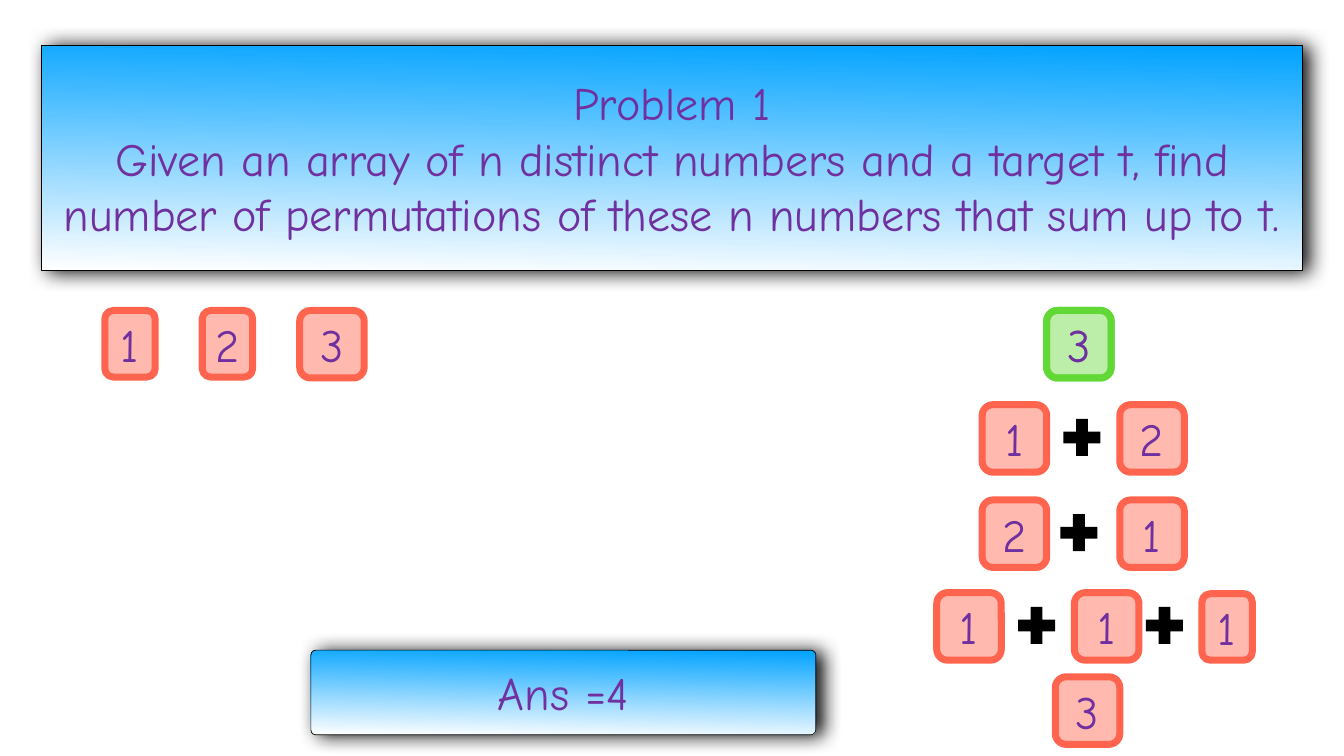
import pptx
import pptx.util
import pptx.oxml
import pptx.oxml.ns
from pptx.dml.color import RGBColor
from pptx.enum.shapes import MSO_SHAPE
from pptx.enum.text import MSO_ANCHOR, MSO_AUTO_SIZE, PP_ALIGN

RED = RGBColor(0xFF, 0x64, 0x4E)
GREEN = RGBColor(0x61, 0xD8, 0x36)
MINT = RGBColor(0xA0, 0xE8, 0x86)
BLUE = RGBColor(0x00, 0xA2, 0xFF)
WHITE = RGBColor(0xFF, 0xFF, 0xFF)
BLACK = RGBColor(0, 0, 0)
PURPLE = RGBColor(0x70, 0x30, 0xA0)
FONT = "Comic Neue"

# Places and sizes are percent of the slide's width and height.
WIDTH, HEIGHT = pptx.util.Inches(26.67), pptx.util.Inches(15)
WIDE, SLIM = (4.8, 8.93), (3.75, 8.8)
PLUS = (3.75, 6.67)
PITCH = 10.24  # from one term of a sum to the next


def scale(box):
    left, top, wide, high = box
    return [round(n / 100 * full) for n, full in
            ((left, WIDTH), (top, HEIGHT), (wide, WIDTH), (high, HEIGHT))]


def put_text(shape, text, size=66, color=PURPLE, fit=MSO_AUTO_SIZE.NONE):
    frame = shape.text_frame
    frame.text = text
    frame.word_wrap = True
    frame.auto_size = fit
    frame.vertical_anchor = MSO_ANCHOR.MIDDLE
    inset = pptx.util.Inches(0.06)
    frame.margin_left = frame.margin_right = inset
    frame.margin_top = frame.margin_bottom = inset
    for para in frame.paragraphs:
        para.alignment = PP_ALIGN.CENTER
        para.line_spacing = 1.0
        para.space_before = para.space_after = pptx.util.Pt(0)
        para.font.size = pptx.util.Pt(size)
        para.font.name = FONT
        para.font.color.rgb = color


def add_node(root, xml):
    root.append(pptx.oxml.parse_xml(
        xml.replace(" ", f" {pptx.oxml.ns.nsdecls('a')} ", 1)))


def add_tile(slide, text, left, top, size=WIDE, fill=RED, line=RED):
    tile = slide.shapes.add_shape(
        MSO_SHAPE.ROUNDED_RECTANGLE, *scale((left, top, *size)))
    tile.shadow.inherit = False
    tile.fill.solid()
    tile.fill.fore_color.rgb = fill
    tone = tile.element.spPr.find(".//" + pptx.oxml.ns.qn("a:srgbClr"))
    add_node(tone, '<a:alpha val="45000"/>')
    tile.line.color.rgb = line
    tile.line.width = pptx.util.Pt(10)
    put_text(tile, text, fit=MSO_AUTO_SIZE.SHAPE_TO_FIT_TEXT)


def add_plus(slide, left, top):
    plus = slide.shapes.add_shape(
        MSO_SHAPE.MATH_PLUS, *scale((left, top, *PLUS)))
    plus.shadow.inherit = False
    plus.fill.solid()
    plus.fill.fore_color.rgb = BLACK
    plus.line.fill.background()


def style_panel(panel, text):
    """Give a shape the blue fade, thin outline, soft shadow and text."""
    panel.fill.gradient()
    panel.fill.gradient_angle = 269
    for stop, color in zip(panel.fill.gradient_stops, (BLUE, WHITE)):
        stop.color.rgb = color
    panel.line.color.rgb = BLACK
    panel.line.width = pptx.util.Pt(1)
    panel.shadow.inherit = False
    effects = panel.element.spPr.find(pptx.oxml.ns.qn("a:effectLst"))
    blur, dist = pptx.util.Pt(28), pptx.util.Pt(9)
    add_node(effects, f'<a:outerShdw blurRad="{blur}" dist="{dist}" dir="0" '
             'rotWithShape="0"><a:srgbClr val="000000">'
             '<a:alpha val="97000"/></a:srgbClr></a:outerShdw>')
    put_text(panel, text)


def add_title(slide, box, text):
    title = slide.shapes.title
    title.left, title.top, title.width, title.height = scale(box)
    add_node(title.element.spPr, '<a:prstGeom prst="roundRect"><a:avLst>'
             '<a:gd name="adj" fmla="val 5900"/></a:avLst></a:prstGeom>')
    style_panel(title, text)


def add_answer(slide, box, text):
    panel = slide.shapes.add_shape(MSO_SHAPE.ROUNDED_RECTANGLE, *scale(box))
    panel.adjustments[0] = 0.059
    style_panel(panel, text)


def add_array(slide, left, top):
    for col, (text, size) in enumerate(
            (("1", SLIM), ("2", SLIM), ("3", WIDE))):
        add_tile(slide, text, left + col * 7.25, top, size)


def add_target(slide, left, top):
    for _ in range(2):  # two layers deepen the tint
        add_tile(slide, "3", left, top, fill=MINT, line=GREEN)


def add_sum(slide, left, top, terms, signs=()):
    """Lay out terms at an even pitch, with plus signs at given offsets."""
    for col, text in enumerate(terms):
        add_tile(slide, text, left + col * PITCH, top)
    for shift in signs:
        add_plus(slide, left + shift, top + 1)


def main():
    deck = pptx.Presentation()
    deck.slide_width, deck.slide_height = WIDTH, HEIGHT
    slide = deck.slides.add_slide(deck.slide_layouts.get_by_name("Title Only"))
    add_title(slide, (3.07, 6, 93.85, 29.73),
              "Problem 1\nGiven an array of n distinct numbers and a target t, "
              "find number of permutations of these n numbers that sum up to t.")
    add_array(slide, 7.8, 41.07)
    add_target(slide, 77.88, 41.07)
    add_sum(slide, 73.08, 53.53, "12", [5.55])
    add_sum(slide, 73.08, 66.13, "21", [5.32])
    add_sum(slide, 69.7, 78.4, "11", [5.55, 15.07])
    add_tile(slide, "1", 89.43, 78.53, SLIM)
    add_sum(slide, 78.52, 89.53, "3")
    add_answer(slide, (23.13, 86, 37.57, 11.2), "Ans =4")
    deck.save("out.pptx")


if __name__ == "__main__":
    main()
